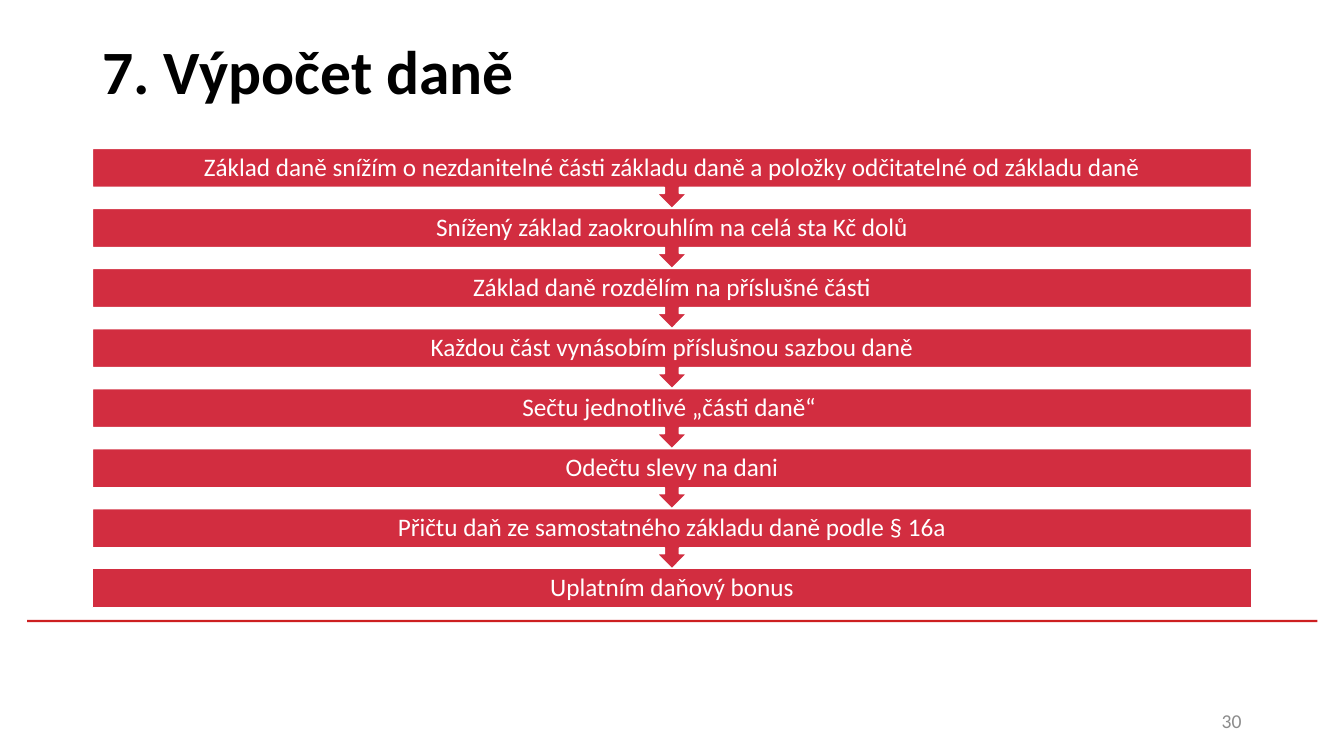
from dataclasses import dataclass

from pptx import Presentation
from pptx.dml.color import RGBColor
from pptx.enum.shapes import MSO_SHAPE
from pptx.enum.text import MSO_ANCHOR, MSO_AUTO_SIZE, PP_ALIGN
from pptx.slide import Slide
from pptx.text.text import TextFrame
from pptx.util import Pt

RECTANGLE = MSO_SHAPE.RECTANGLE
CALLOUT = MSO_SHAPE.DOWN_ARROW_CALLOUT
MIDDLE = MSO_ANCHOR.MIDDLE
NO_AUTOFIT = MSO_AUTO_SIZE.NONE
LEFT, CENTER, RIGHT = PP_ALIGN.LEFT, PP_ALIGN.CENTER, PP_ALIGN.RIGHT


@dataclass(frozen=True)
class TextStyle:
    size: float
    color: RGBColor
    align: PP_ALIGN
    bold: bool = False
    line_spacing: float = 0.9


@dataclass(frozen=True)
class Theme:
    font: str = "Calibri"
    step_fill: RGBColor = RGBColor(0xD2, 0x2D, 0x40)
    step_outline: RGBColor = RGBColor(0xFF, 0xFF, 0xFF)
    rule: RGBColor = RGBColor(0xCD, 0x1F, 0x21)
    title: TextStyle = TextStyle(44, RGBColor(0, 0, 0), LEFT, bold=True)
    step: TextStyle = TextStyle(18, RGBColor(0xFF, 0xFF, 0xFF), CENTER)
    number: TextStyle = TextStyle(14, RGBColor(0x8C, 0x8C, 0x8C), RIGHT, line_spacing=1.0)


@dataclass(frozen=True)
class Box:
    left: float
    top: float
    width: float
    height: float

    def in_points(self) -> tuple[Pt, Pt, Pt, Pt]:
        return Pt(self.left), Pt(self.top), Pt(self.width), Pt(self.height)


@dataclass(frozen=True)
class Step:
    text: str
    box: Box
    leads_on: bool


THEME = Theme()
STEP_LEFT, STEP_TOP, STEP_WIDTH = 66, 106, 828
STEP_PITCH, BAR_HEIGHT = 42.9, 27.9
STEP_TEXTS = (
    "Základ daně snížím o nezdanitelné části základu daně a položky odčitatelné od základu daně",
    "Snížený základ zaokrouhlím na celá sta Kč dolů",
    "Základ daně rozdělím na příslušné části",
    "Každou část vynásobím příslušnou sazbou daně",
    "Sečtu jednotlivé „části daně“ ",
    "Odečtu slevy na dani",
    "Přičtu daň ze samostatného základu daně podle § 16a",
    "Uplatním daňový bonus",
)


def write(frame: TextFrame, text: str, style: TextStyle) -> None:
    frame.word_wrap = True
    frame.auto_size = NO_AUTOFIT
    frame.vertical_anchor = MIDDLE
    frame.text = text
    paragraph = frame.paragraphs[0]
    paragraph.alignment = style.align
    paragraph.line_spacing = style.line_spacing
    paragraph.font.name = THEME.font
    paragraph.font.size = Pt(style.size)
    paragraph.font.bold = style.bold
    paragraph.font.color.rgb = style.color


def plan_steps() -> list[Step]:
    last = len(STEP_TEXTS) - 1
    return [
        Step(
            text,
            Box(STEP_LEFT, STEP_TOP + index * STEP_PITCH, STEP_WIDTH,
                STEP_PITCH if index < last else BAR_HEIGHT),
            index < last,
        )
        for index, text in enumerate(STEP_TEXTS)
    ]


def draw_step(slide: Slide, step: Step) -> None:
    kind = CALLOUT if step.leads_on else RECTANGLE
    bar = slide.shapes.add_shape(kind, *step.box.in_points())
    bar.shadow.inherit = False
    if step.leads_on:
        bar.adjustments[3] = BAR_HEIGHT / STEP_PITCH
    bar.fill.solid()
    bar.fill.fore_color.rgb = THEME.step_fill
    bar.line.color.rgb = THEME.step_outline
    bar.line.width = Pt(1)
    frame = bar.text_frame
    frame.margin_left = frame.margin_right = Pt(10)
    frame.margin_top = frame.margin_bottom = Pt(0)
    write(frame, step.text, THEME.step)


def draw_rule(slide: Slide, box: Box) -> None:
    rule = slide.shapes.add_shape(RECTANGLE, *box.in_points())
    rule.shadow.inherit = False
    rule.fill.solid()
    rule.fill.fore_color.rgb = THEME.rule
    rule.line.fill.background()


def draw_title(slide: Slide, text: str, box: Box) -> None:
    title = slide.shapes.title
    title.left, title.top, title.width, title.height = box.in_points()
    write(title.text_frame, text, THEME.title)


def draw_number(slide: Slide, text: str, box: Box) -> None:
    number = slide.shapes.add_textbox(*box.in_points())
    write(number.text_frame, text, THEME.number)


def main() -> None:
    presentation = Presentation()
    presentation.slide_width, presentation.slide_height = Pt(960), Pt(540)
    slide = presentation.slides.add_slide(presentation.slide_layouts[5])
    draw_rule(slide, Box(19.4, 442.8, 921.6, 1.6))
    draw_title(slide, "7. Výpočet daně", Box(66, 1.4, 828, 104.4))
    draw_number(slide, "30", Box(678, 500.5, 216, 28.75))
    for step in plan_steps():
        draw_step(slide, step)
    presentation.save("out.pptx")


if __name__ == "__main__":
    main()
